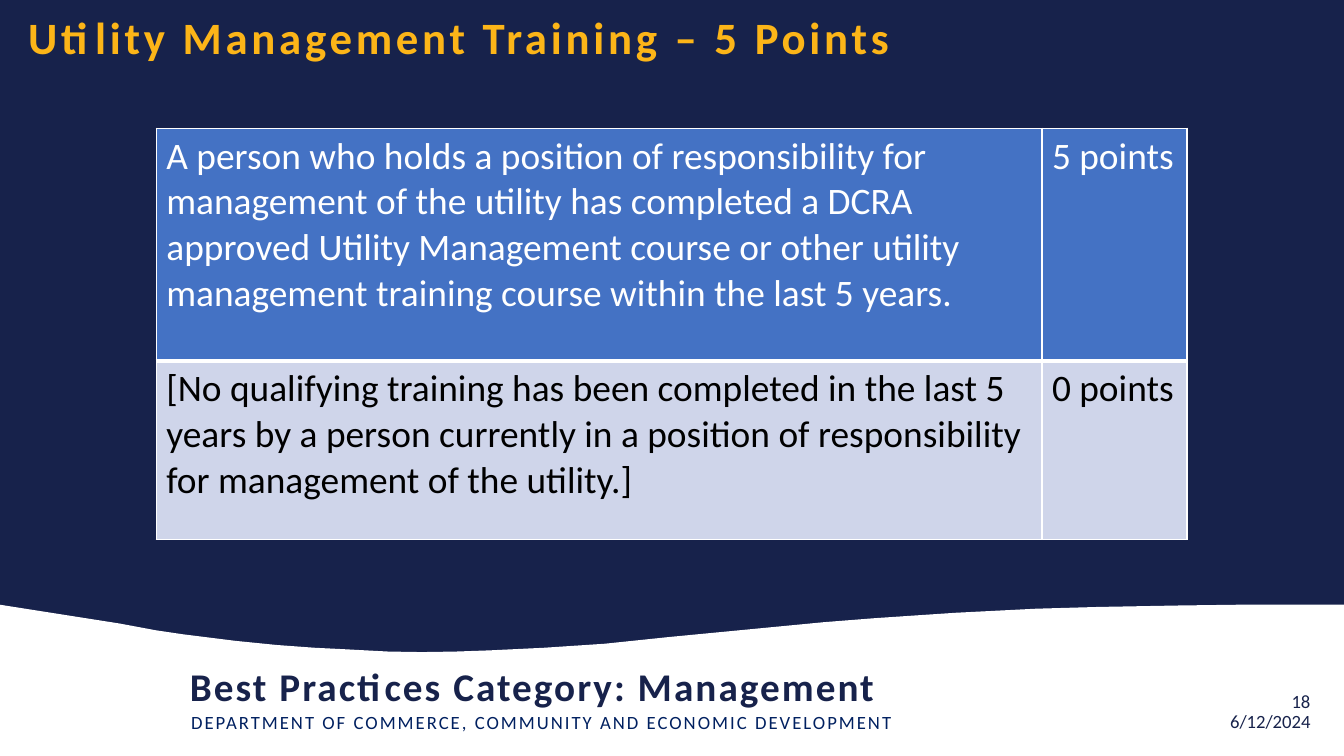
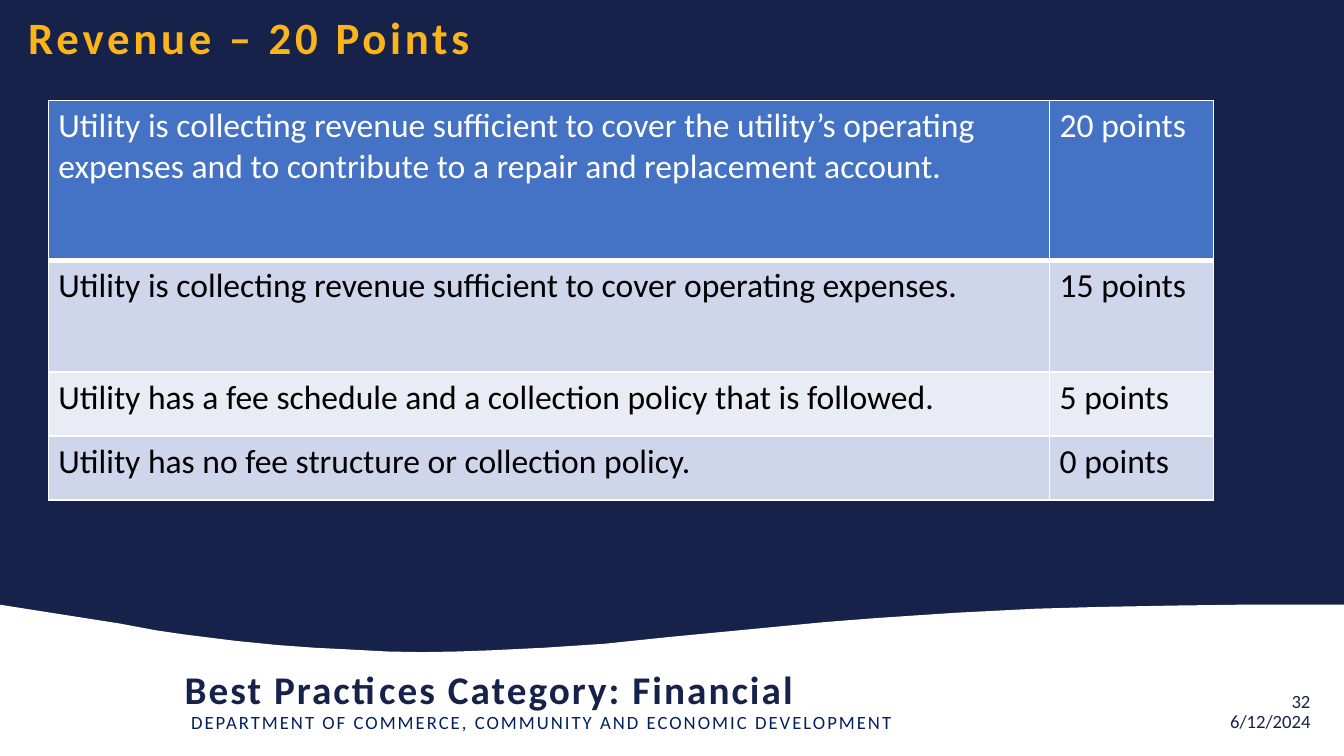
from lxml.etree import SubElement
from pptx import Presentation
from pptx.dml.color import RGBColor
from pptx.enum.shapes import MSO_SHAPE
from pptx.enum.text import MSO_AUTO_SIZE, PP_ALIGN
from pptx.oxml.ns import qn
from pptx.util import Inches, Pt

WIDTH = Inches(10)
HEIGHT = WIDTH * 9 // 16
FONT = "Calibri"
COLORS = {
    "navy": "17224B", "white": "FFFFFF", "gold": "FCB518",
    "department": "002060", "header": "4472C4", "black": "000000",
    "band_dark": "CFD5EA", "band_light": "E9EBF5",
}
WAVE = [
    (100, 80), (92.1, 80), (87.8, 80.1), (81.7, 80.3), (77.1, 80.53),
    (71.1, 81.07), (65.1, 81.78), (61.3, 82.31), (49.8, 84.27), (45, 85.16),
    (40.5, 85.69), (36.4, 86.04), (33.9, 86.2), (31.4, 86.27), (28.9, 86.2),
    (25.4, 85.87), (23.4, 85.69), (20.6, 85.33), (17.6, 84.8), (13.6, 83.91),
    (11.6, 83.38), (8.9, 82.49), (0, 80), (0, 100), (100, 100),
]


def rgb(name):
    return RGBColor.from_string(COLORS[name])


def px(percent):
    return round(WIDTH * percent / 100)


def py(percent):
    return round(HEIGHT * percent / 100)


def area(left, top, width, height):
    return px(left), py(top), px(width), py(height)


def paint(sp, color):
    sp.shadow.inherit = False
    sp.fill.solid()
    sp.fill.fore_color.rgb = rgb(color)
    sp.line.fill.background()


def style_text(p, size, color, bold=False, spacing=0):
    for r in p.runs:
        r.font.name = FONT
        r.font.size = Pt(size)
        r.font.bold = bold
        r.font.color.rgb = rgb(color)
        if spacing:
            r._r.get_or_add_rPr().set("spc", str(round(spacing * 100)))


def add_text(s, text, box, size, color, bold=False, spacing=0,
             align=PP_ALIGN.LEFT, inset=0, indent=0):
    tf = s.shapes.add_textbox(*area(*box)).text_frame
    tf.word_wrap = True
    tf.auto_size = MSO_AUTO_SIZE.SHAPE_TO_FIT_TEXT
    tf.margin_left = tf.margin_right = Inches(inset)
    tf.margin_top = tf.margin_bottom = Inches(inset / 2)
    p = tf.paragraphs[0]
    p.text = text
    p.alignment = align
    if indent:
        p._p.get_or_add_pPr().set("marL", str(Pt(indent)))
    style_text(p, size, color, bold, spacing)


def add_wave(s):
    points = [(px(x), py(y)) for x, y in WAVE]
    builder = s.shapes.build_freeform(*points[0])
    builder.add_line_segments(points[1:], close=True)
    paint(builder.convert_to_shape(), "white")


def add_border(cell, side, width):
    tc_pr = cell._tc.get_or_add_tcPr()
    ln = SubElement(tc_pr, qn(f"a:ln{side}"), w=str(Pt(width)))
    fill = SubElement(ln, qn("a:solidFill"))
    SubElement(fill, qn("a:srgbClr"), val=COLORS["white"])


def style_cell(cell, text, row, size):
    borders = {"L": 1, "R": 1, "T": 3 if row == 1 else 1, "B": 3 if row == 0 else 1}
    for side, width in borders.items():
        add_border(cell, side, width)
    band = "band_dark" if row % 2 else "band_light"
    cell.fill.solid()
    cell.fill.fore_color.rgb = rgb("header" if row == 0 else band)
    cell.margin_left = cell.margin_right = Pt(5.4)
    cell.margin_top = cell.margin_bottom = Pt(2.7)
    p = cell.text_frame.paragraphs[0]
    p.text = text
    style_text(p, size, "white" if row == 0 else "black")


def add_score_table(s, left, top, widths, heights, rows, size):
    box = area(left, top, sum(widths), sum(heights))
    table = s.shapes.add_table(len(rows), len(widths), *box).table
    for column, width in zip(table.columns, widths):
        column.width = px(width)
    for i, (height, texts) in enumerate(zip(heights, rows)):
        table.rows[i].height = py(height)
        for j, text in enumerate(texts):
            style_cell(table.cell(i, j), text, i, size)


def add_score_slide(prs, title, title_width, category, category_at, number):
    s = prs.slides.add_slide(prs.slide_layouts[6])
    backdrop = s.shapes.add_shape(MSO_SHAPE.RECTANGLE, 0, 0, WIDTH, HEIGHT)
    paint(backdrop, "navy")
    add_wave(s)
    add_text(s, "DEPARTMENT OF COMMERCE, COMMUNITY AND ECONOMIC DEVELOPMENT",
             (13.1, 93.1, 63.1, 4.8), 10, "department", spacing=1.1,
             inset=0.1, indent=1)
    add_text(s, title, (2.1, 1.24, title_width, 7.11), 24, "gold",
             bold=True, spacing=2)
    add_text(s, category, (*category_at, 62.6, 6.22), 21, "navy",
             bold=True, spacing=1.1, indent=1)
    add_text(s, number, (74.5, 91.2, 23, 3.02), 10, "navy", align=PP_ALIGN.RIGHT)
    add_text(s, "6/12/2024", (89.1, 93.87, 8.4, 3.02), 10, "navy",
             align=PP_ALIGN.RIGHT)
    return s


def main():
    prs = Presentation()
    prs.slide_width, prs.slide_height = WIDTH, HEIGHT

    s = add_score_slide(prs, "Utility Management Training – 5 Points", 78.5,
                        "Best Practices Category: Management", (14, 87.64), "18")
    add_score_table(s, 11.63, 17, (65.9, 10.8), (30.76, 23.64), [
        ("A person who holds a position of responsibility for management of the "
         "utility has completed a DCRA approved Utility Management course or other "
         "utility management training course within the last 5 years.", "5 points"),
        ("[No qualifying training has been completed in the last 5 years by a "
         "person currently in a position of responsibility for management of the "
         "utility.]", "0 points"),
    ], 20)

    s = add_score_slide(prs, "Revenue – 20 Points", 47.9,
                        "Best Practices Category: Financial", (13.6, 88), "32")
    add_score_table(s, 3.6, 13.28, (74.5, 12.2), (21.16, 14.8, 8.45, 8.45), [
        ("Utility is collecting revenue sufficient to cover the utility’s operating "
         "expenses and to contribute to a repair and replacement account.",
         "20 points"),
        ("Utility is collecting revenue sufficient to cover operating expenses.",
         "15 points"),
        ("Utility has a fee schedule and a collection policy that is followed.",
         "5 points"),
        ("Utility has no fee structure or collection policy.", "0 points"),
    ], 18)

    prs.save("out.pptx")


if __name__ == "__main__":
    main()
